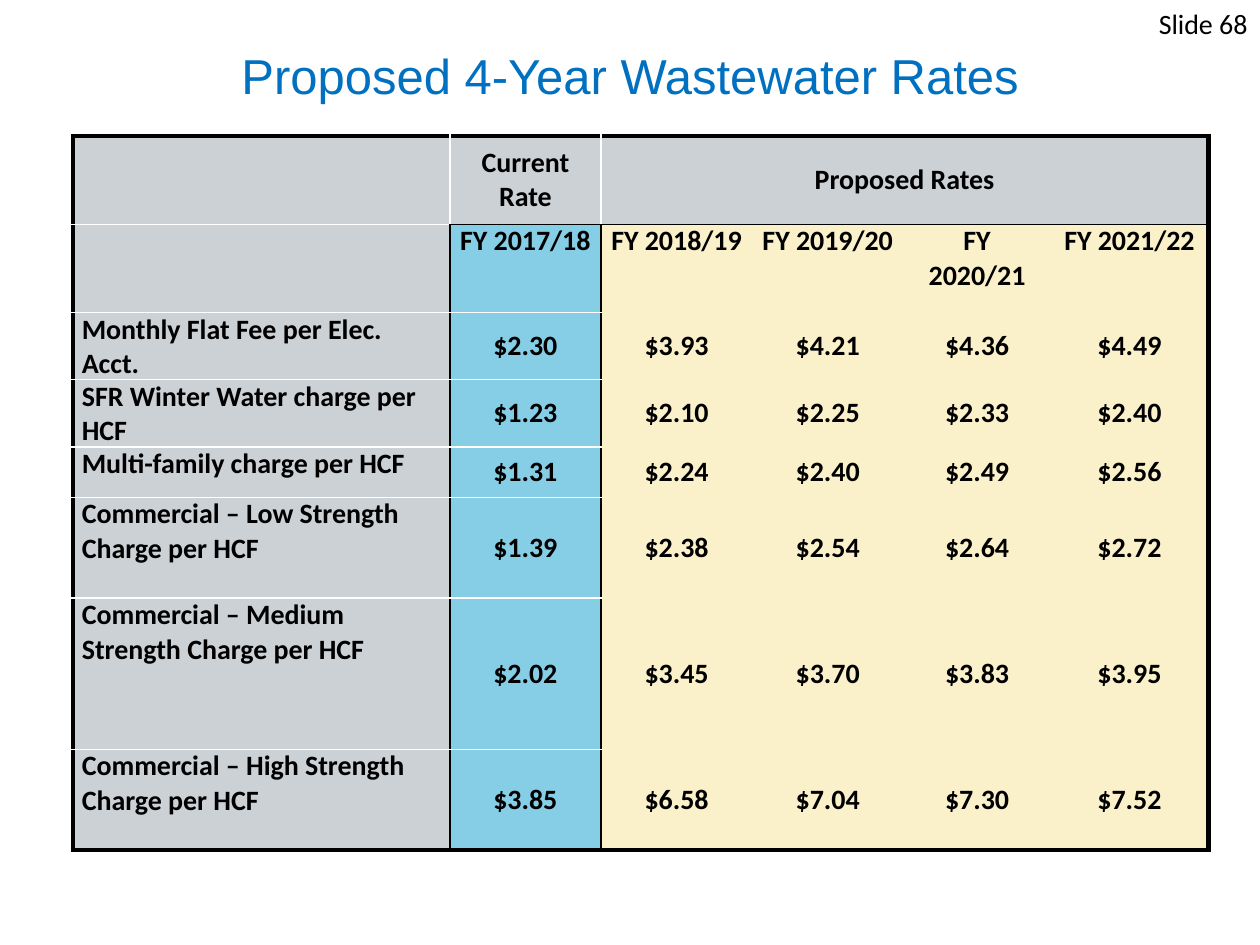
import lxml.etree
import pptx
import pptx.dml.color
import pptx.enum.text
import pptx.oxml.ns
import pptx.util

ALIGN = pptx.enum.text.PP_ALIGN
ANCHOR = pptx.enum.text.MSO_ANCHOR
COLORS = {
    "title": "0070C0",
    "text": "000000",
    "label": "CCD1D6",
    "current": "86CDE6",
    "proposed": "FAF0CA",
    "dark": "000000",
    "light": "FFFFFF",
}

# The slide is a grid of 100 columns by 75 rows of square units
UNIT = pptx.util.Inches(0.1)
GRID_COLUMNS, GRID_ROWS = 100, 75
COLUMN_UNITS = [29.9, 12, 12, 12, 11.7, 12.5]
ROW_UNITS = [7, 7, 4, 4, 4, 8, 12, 8]

RATES = [
    ["", "Current Rate", "Proposed Rates", "", "", ""],
    ["", "FY 2017/18", "FY 2018/19", "FY 2019/20", "FY 2020/21", "FY 2021/22"],
    ["Monthly Flat Fee per Elec. Acct.", "$2.30", "$3.93", "$4.21", "$4.36", "$4.49"],
    ["SFR Winter Water charge per HCF", "$1.23", "$2.10", "$2.25", "$2.33", "$2.40"],
    ["Multi-family charge per HCF", "$1.31", "$2.24", "$2.40", "$2.49", "$2.56"],
    ["Commercial – Low Strength Charge per HCF", "$1.39", "$2.38", "$2.54", "$2.64", "$2.72"],
    ["Commercial – Medium Strength Charge per HCF", "$2.02", "$3.45", "$3.70", "$3.83", "$3.95"],
    ["Commercial – High Strength Charge per HCF", "$3.85", "$6.58", "$7.04", "$7.30", "$7.52"],
]
LAST_ROW, LAST_COLUMN = len(RATES) - 1, len(RATES[0]) - 1
OUTER, DARK, LIGHT = ("dark", 3), ("dark", 1), ("light", 1)


def units(count):
    return round(count * UNIT)


def set_font(paragraph, name, size, color, bold=False):
    paragraph.font.name = name
    paragraph.font.size = pptx.util.Pt(size)
    paragraph.font.bold = bold
    paragraph.font.color.rgb = pptx.dml.color.RGBColor.from_string(COLORS[color])


def add_text(slide, box, text, align, anchor, name, size, color):
    frame = slide.shapes.add_textbox(*map(units, box)).text_frame
    frame.word_wrap = True
    frame.vertical_anchor = anchor
    paragraph = frame.paragraphs[0]
    paragraph.text = text
    paragraph.alignment = align
    set_font(paragraph, name, size, color)


def vertical_edge(row, edge):
    """Line at the left of column number `edge`."""
    if edge in (0, LAST_COLUMN + 1):
        return OUTER
    if edge > 2:
        return None
    return LIGHT if row == 0 else DARK


def horizontal_edge(edge, column):
    """Line at the top of row number `edge`."""
    if edge in (0, LAST_ROW + 1):
        return OUTER
    if edge == 1 and column > 0:
        return DARK
    return LIGHT if column < 2 else None


def set_borders(cell, row, column, span):
    lines = {
        "lnL": vertical_edge(row, column),
        "lnR": vertical_edge(row, column + span),
        "lnT": horizontal_edge(row, column),
        "lnB": horizontal_edge(row + 1, column),
    }
    qn = pptx.oxml.ns.qn
    properties = cell._tc.get_or_add_tcPr()
    for position, (tag, line) in enumerate(lines.items()):
        element = lxml.etree.Element(qn("a:" + tag))
        if line is None:
            lxml.etree.SubElement(element, qn("a:noFill"))
        else:
            color, width = line
            element.set("w", str(pptx.util.Pt(width)))
            fill = lxml.etree.SubElement(element, qn("a:solidFill"))
            lxml.etree.SubElement(fill, qn("a:srgbClr"), val=COLORS[color])
        properties.insert(position, element)


def fill_cell(cell, row, column):
    if row == 0 or column == 0:
        color = "label"
    else:
        color = "current" if column == 1 else "proposed"
    cell.fill.solid()
    cell.fill.fore_color.rgb = pptx.dml.color.RGBColor.from_string(COLORS[color])
    set_borders(cell, row, column, cell.span_width if cell.is_merge_origin else 1)

    cell.margin_left = cell.margin_right = pptx.util.Inches(0.07)
    cell.margin_top = cell.margin_bottom = 0
    top_aligned = row == 1 or column == 0
    cell.vertical_anchor = ANCHOR.TOP if top_aligned else ANCHOR.MIDDLE
    paragraph = cell.text_frame.paragraphs[0]
    paragraph.text = RATES[row][column]
    paragraph.alignment = ALIGN.LEFT if column == 0 else ALIGN.CENTER
    set_font(paragraph, "Calibri", 16, "text", bold=True)


def add_rate_table(slide, left, top):
    table = slide.shapes.add_table(
        len(RATES), len(RATES[0]), units(left), units(top),
        units(sum(COLUMN_UNITS)), units(sum(ROW_UNITS)),
    ).table
    table.first_row = table.horz_banding = False
    for column, width in zip(table.columns, COLUMN_UNITS):
        column.width = units(width)
    for row, height in zip(table.rows, ROW_UNITS):
        row.height = units(height)

    # One heading spans all the proposed years
    table.cell(0, 2).merge(table.cell(0, LAST_COLUMN))
    for row in range(len(RATES)):
        for column in range(len(RATES[0])):
            fill_cell(table.cell(row, column), row, column)


def main():
    presentation = pptx.Presentation()
    presentation.slide_width = units(GRID_COLUMNS)
    presentation.slide_height = units(GRID_ROWS)
    slide = presentation.slides.add_slide(presentation.slide_layouts[6])

    # Title
    add_text(slide, (5, 1.8, 90, 8.3), "Proposed 4-Year Wastewater Rates",
             ALIGN.CENTER, ANCHOR.MIDDLE, "Arial", 28, "title")
    # Rates by customer class and year
    add_rate_table(slide, 5.8, 10.8)
    # Slide number
    add_text(slide, (76.7, 0, 23.3, 5), "Slide 68",
             ALIGN.RIGHT, ANCHOR.TOP, "Calibri", 16, "text")

    presentation.save("out.pptx")


if __name__ == "__main__":
    main()
